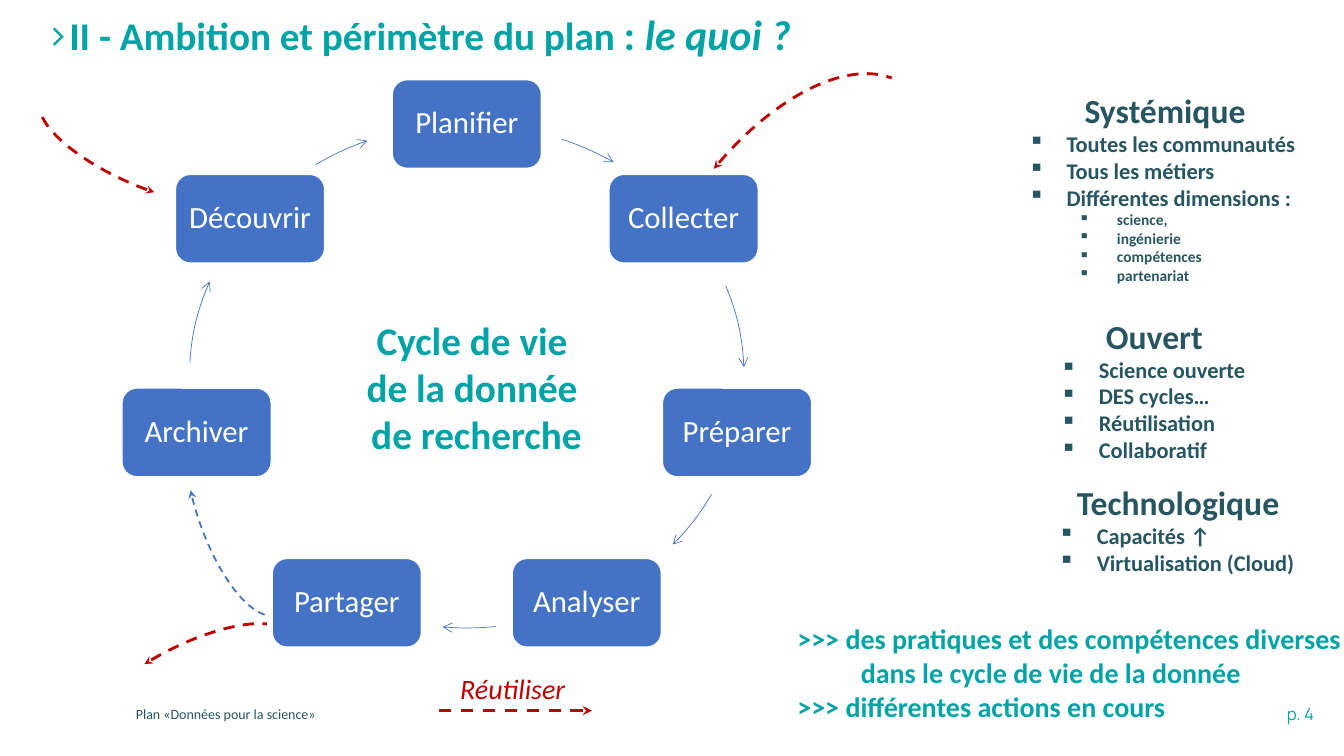
import math

import pptx
import pptx.dml.color
import pptx.enum.dml
import pptx.enum.shapes
import pptx.enum.text
import pptx.oxml
import pptx.oxml.ns
import pptx.util

EMU_PER_PX = 9144  # 100 px to the inch
BLUE, TEAL, DARK, RED, WHITE = "4472C4", "00A3A6", "275662", "C00000", "FFFFFF"
ALIGN = pptx.enum.text.PP_ALIGN
SHAPE = pptx.enum.shapes.MSO_SHAPE

# Cycle: an ellipse with one step every seventh of a turn, clockwise from the top
CENTRE_X, CENTRE_Y, RADIUS_X, RADIUS_Y = 463, 373, 275, 250
STEP_WIDTH, STEP_HEIGHT = 148, 88
STEPS = ["Planifier", "Collecter", "Préparer", "Analyser",
         "Partager", "Archiver", "Découvrir"]
ARROW_SPANS = [(20, 32), (69, 88), (118, 132), (174, 185), (273, 292), (327, 339)]

# Dashed arcs: left, top, width, height, rotation, flips, start, end, colour, weight
DASHED_ARCS = [
    (195, 388, 87, 228, 341.4, ["flipH"], 323.9, 84.82, BLUE, 1.25),
    (104, 33, 78, 224, 113.8, [], 323.9, 84.82, RED, 2),
    (146, 568, 78, 224, 243.1, [], 323.9, 79.47, RED, 2),
    (665, 47, 223, 430, 33.9, ["flipH", "flipV"], 20.2, 86.41, RED, 2),
]

# Themes: left, top, width, height, heading, points, sub-points
THEMES = [
    (1010, 84, 291, 256, "Systémique",
     ["Toutes les communautés", "Tous les métiers", "Différentes dimensions :"],
     ["science,", "ingénierie", "compétences", "partenariat"]),
    (1042, 308, 206, 158, "Ouvert",
     ["Science ouverte", "DES cycles…", "Réutilisation", "Collaboratif"], []),
    (1040, 473, 257, 155, "Technologique",
     ["Capacités ↑", "Virtualisation (Cloud)"], []),
]


def px(length):
    return pptx.util.Emu(length * EMU_PER_PX)


def colour(value):
    return pptx.dml.color.RGBColor.from_string(value)


def style(span, size, ink, bold=False, italic=False, font="Calibri"):
    span.font.name = font
    span.font.size = pptx.util.Pt(size)
    span.font.color.rgb = colour(ink)
    span.font.bold = bold
    span.font.italic = italic


def write(paragraph, text, size, ink, align=ALIGN.LEFT, **look):
    paragraph.text = text
    paragraph.alignment = align
    for span in paragraph.runs:
        style(span, size, ink, **look)


def indent(paragraph, margin, first=0, bullet=None, font=None):
    properties = paragraph._p.get_or_add_pPr()
    properties.set("marL", str(px(margin)))
    properties.set("indent", str(px(first)))
    if font:
        pptx.oxml.ns.qn("a:buFont")
        add_child(properties, "buFont", typeface=font)
    if bullet:
        add_child(properties, "buChar", char=bullet)


def add_child(parent, tag, **attributes):
    child = pptx.oxml.parse_xml(f"<a:{tag} {pptx.oxml.ns.nsdecls('a')}/>")
    for name, value in attributes.items():
        child.set(name, value)
    parent.append(child)


def add_box(page, left, top, width, height, wrap=True):
    box = page.shapes.add_textbox(px(left), px(top), px(width), px(height))
    box.text_frame.word_wrap = wrap
    return box


def add_label(page, place, text, size, ink, wrap=True, **look):
    box = add_box(page, *place, wrap=wrap)
    write(box.text_frame.paragraphs[0], text, size, ink, **look)


def set_stroke(shape, ink, weight, end, arrow, dashed):
    shape.line.color.rgb = colour(ink)
    shape.line.width = pptx.util.Pt(weight)
    if dashed:
        shape.line.dash_style = pptx.enum.dml.MSO_LINE.DASH
    add_child(shape._element.spPr.find(pptx.oxml.ns.qn("a:ln")), end, type=arrow)


def add_arc(page, place, start, finish, ink, weight, end, arrow, dashed=False):
    left, top, width, height = place
    arc = page.shapes.add_shape(SHAPE.ARC, px(left), px(top), px(width), px(height))
    arc.shadow.inherit = False
    arc.fill.background()
    # Adjustments count 0.6 for each degree
    arc.adjustments[0] = start * 0.6
    arc.adjustments[1] = finish * 0.6
    set_stroke(arc, ink, weight, end, arrow, dashed)
    return arc


def add_step(page, text, turn):
    x = CENTRE_X + RADIUS_X * math.sin(turn)
    y = CENTRE_Y - RADIUS_Y * math.cos(turn)
    step = page.shapes.add_shape(
        SHAPE.ROUNDED_RECTANGLE,
        px(round(x - STEP_WIDTH / 2)), px(round(y - STEP_HEIGHT / 2)),
        px(STEP_WIDTH), px(STEP_HEIGHT))
    step.shadow.inherit = False
    step.fill.solid()
    step.fill.fore_color.rgb = colour(BLUE)
    step.line.color.rgb = colour(WHITE)
    step.line.width = pptx.util.Pt(1)
    frame = step.text_frame
    frame.word_wrap = True
    frame.vertical_anchor = pptx.enum.text.MSO_ANCHOR.MIDDLE
    frame.margin_left = frame.margin_right = px(9)
    frame.margin_top = frame.margin_bottom = px(9)
    write(frame.paragraphs[0], text, 22, WHITE, ALIGN.CENTER)
    frame.paragraphs[0].line_spacing = 0.9


def ellipse_angle(degrees):
    """Clockwise angle from the right, for a turn counted from the top."""
    turn = math.radians(degrees)
    slope = math.atan2(-RADIUS_Y * math.cos(turn), RADIUS_X * math.sin(turn))
    return math.degrees(slope) % 360


def add_cycle(page):
    for index, text in enumerate(STEPS):
        add_step(page, text, index * math.tau / len(STEPS))
    ring = (CENTRE_X - RADIUS_X, CENTRE_Y - RADIUS_Y, 2 * RADIUS_X, 2 * RADIUS_Y)
    for start, finish in ARROW_SPANS:
        add_arc(page, ring, ellipse_angle(start), ellipse_angle(finish),
                BLUE, 0.5, "tailEnd", "arrow")
    for *place, rotation, flips, start, finish, ink, weight in DASHED_ARCS:
        arc = add_arc(page, place, start, finish, ink, weight,
                      "headEnd", "stealth", dashed=True)
        arc.rotation = rotation
        for flip in flips:
            arc._element.spPr.xfrm.set(flip, "1")
    add_label(page, (345, 309, 255, 151), "Cycle de vie \nde la donnée \nde recherche",
              28, TEAL, align=ALIGN.CENTER, bold=True)


def add_reuse(page):
    line = page.shapes.add_connector(
        pptx.enum.shapes.MSO_CONNECTOR.STRAIGHT, px(587), px(705), px(431), px(705))
    set_stroke(line, RED, 2.25, "headEnd", "stealth", dashed=True)
    add_child(line._element.spPr, "effectLst")
    add_label(page, (446, 661, 125, 44), "Réutiliser", 20, RED, wrap=False,
              align=ALIGN.CENTER, italic=True)


def add_theme(page, left, top, width, height, heading, points, details):
    frame = add_box(page, left, top, width, height, wrap=False).text_frame
    write(frame.paragraphs[0], heading, 24, DARK, ALIGN.CENTER, bold=True)
    for texts, size, margin, level in ((points, 16, 38, 0), (details, 11, 88, 1)):
        for text in texts:
            paragraph = frame.add_paragraph()
            paragraph.level = level
            indent(paragraph, margin, -38, "▪")
            write(paragraph, text, size, DARK, bold=True)


def add_title(page):
    frame = add_box(page, 45, -12, 1117, 97).text_frame
    frame.vertical_anchor = pptx.enum.text.MSO_ANCHOR.MIDDLE
    frame.margin_left = 0
    paragraph = frame.paragraphs[0]
    indent(paragraph, 0, -50, ">", "Manrope")
    paragraph.line_spacing = 0.9
    for text, size, italic in (("II - Ambition et périmètre du plan ", 28, False),
                               (": ", 30, False), ("le quoi ?", 30, True)):
        span = paragraph.add_run()
        span.text = text
        style(span, size, TEAL, bold=True, italic=italic)


def add_conclusion(page):
    frame = add_box(page, 781, 612, 763, 111).text_frame
    lines = [(">>> des pratiques et des compétences diverses", 0),
             ("dans le cycle de vie de la donnée", 63),
             (">>> différentes actions en cours", 0)]
    for index, (text, margin) in enumerate(lines):
        paragraph = frame.add_paragraph() if index else frame.paragraphs[0]
        indent(paragraph, margin)
        write(paragraph, text, 20, TEAL, bold=True)


def main():
    deck = pptx.Presentation()
    deck.slide_width, deck.slide_height = px(1333), px(750)
    page = deck.slides.add_slide(deck.slide_layouts[6])

    # Footer
    add_label(page, (1085, 693, 228, 30), "p. 4", 12, TEAL,
              align=ALIGN.RIGHT, font="Manrope")
    add_label(page, (125, 695, 734, 28), "Plan «Données pour la science»", 10, DARK)

    # Data life cycle
    add_cycle(page)
    add_reuse(page)

    # Themes, title and conclusion
    for theme in THEMES:
        add_theme(page, *theme)
    add_title(page)
    add_conclusion(page)
    deck.save("out.pptx")


if __name__ == "__main__":
    main()
